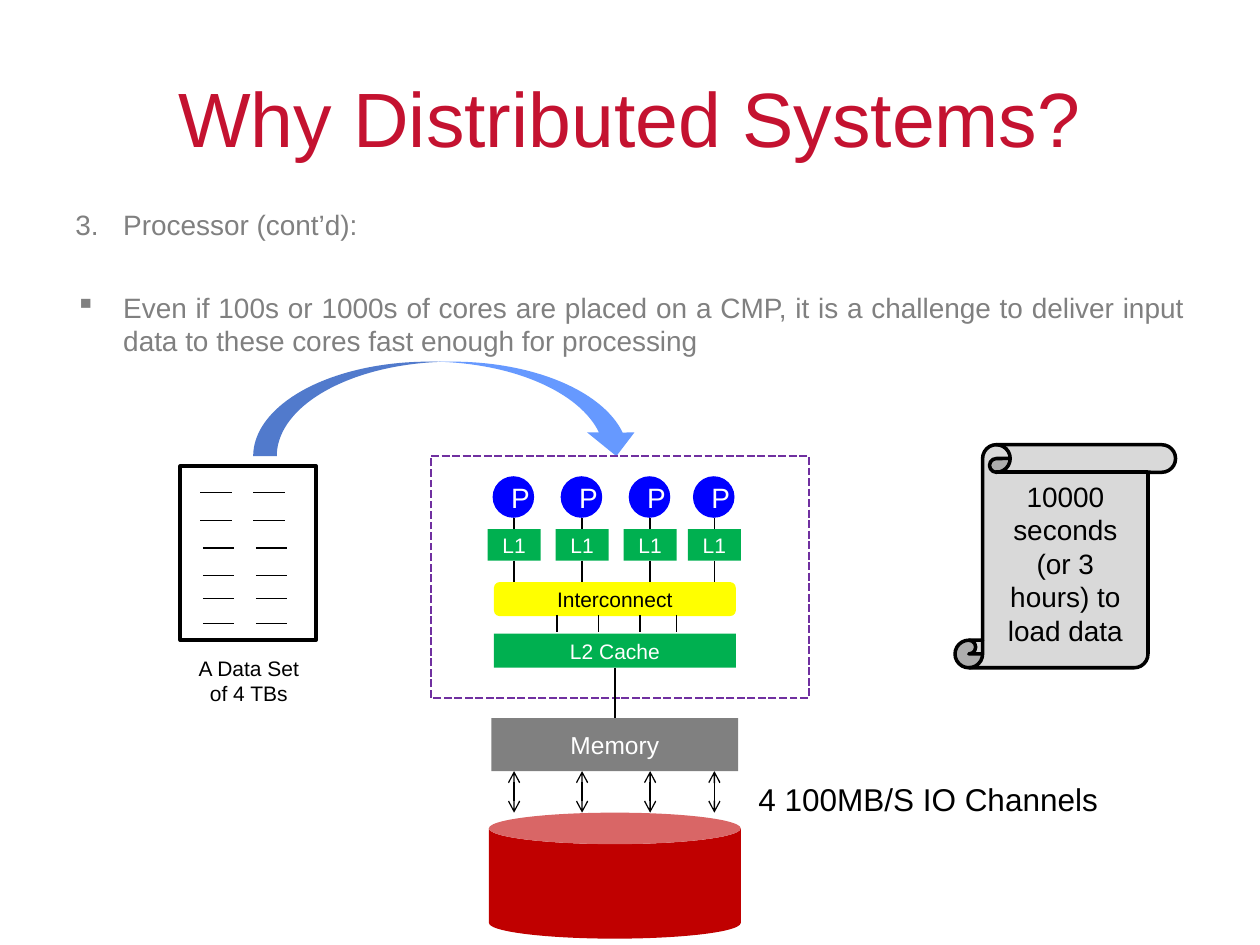
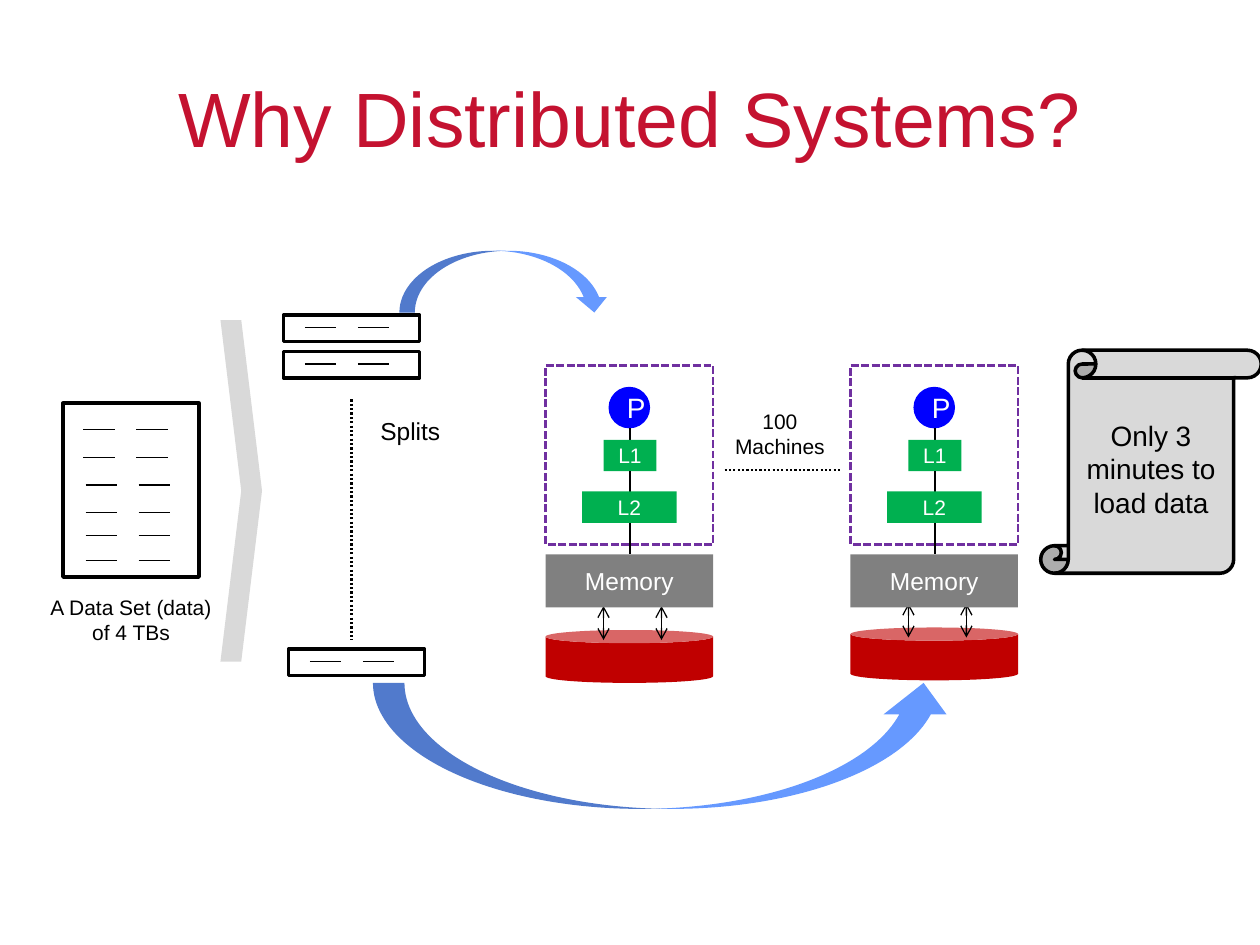
from lxml import etree
from pptx import Presentation
from pptx.dml.color import RGBColor
from pptx.enum.dml import MSO_LINE
from pptx.enum.shapes import MSO_CONNECTOR, MSO_SHAPE
from pptx.enum.text import MSO_ANCHOR, PP_ALIGN
from pptx.oxml.ns import qn
from pptx.util import Inches, Pt

RECT, ROUND, OVAL = MSO_SHAPE.RECTANGLE, MSO_SHAPE.ROUNDED_RECTANGLE, MSO_SHAPE.OVAL
CAN, SCROLL, CHEVRON = MSO_SHAPE.CAN, MSO_SHAPE.VERTICAL_SCROLL, MSO_SHAPE.CHEVRON
DOWN, UP = MSO_SHAPE.CURVED_DOWN_ARROW, MSO_SHAPE.CURVED_UP_ARROW
STRAIGHT = MSO_CONNECTOR.STRAIGHT
DASH, DOT = MSO_LINE.SQUARE_DOT, MSO_LINE.ROUND_DOT
LEFT, CENTER, JUSTIFY = PP_ALIGN.LEFT, PP_ALIGN.CENTER, PP_ALIGN.JUSTIFY
TOP, MIDDLE = MSO_ANCHOR.TOP, MSO_ANCHOR.MIDDLE

# Shared look
FONT = "Arial"
TITLE = "Why Distributed Systems?"
BLACK, WHITE, CRIMSON, GRAY, SILVER = "000000", "FFFFFF", "C41230", "808080", "D9D9D9"
BLUE, SKY, GREEN, YELLOW = "0000FF", "6699FF", "00B050", "FFFF00"
RED, PURPLE = "C00000", "7030A0"


def rgb(code):
    return RGBColor.from_string(code)


def write(para, text, size, color, align):
    para.alignment = align
    run = para.add_run()
    run.text = text
    for name, value in {"name": FONT, "size": Pt(size)}.items():
        setattr(run.font, name, value)
    run.font.color.rgb = rgb(color)


def label(slide, at, lines, size, color=BLACK, align=CENTER, anchor=TOP, wrap=False):
    frame = slide.shapes.add_textbox(*map(Inches, at)).text_frame
    for name, value in {"word_wrap": wrap, "vertical_anchor": anchor}.items():
        setattr(frame, name, value)
    for i, text in enumerate(lines):
        para = frame.add_paragraph() if i else frame.paragraphs[0]
        write(para, text, size, color, align)
    return frame


def block(slide, kind, at, fill=None, text="", size=12, color=WHITE,
          edge=None, width=2, dash=None):
    shape = slide.shapes.add_shape(kind, *map(Inches, at))
    shape.shadow.inherit = False
    if fill:
        shape.fill.solid()
        shape.fill.fore_color.rgb = rgb(fill)
    else:
        shape.fill.background()
    if edge:
        shape.line.color.rgb = rgb(edge)
        shape.line.width = Pt(width)
        if dash:
            shape.line.dash_style = dash
    else:
        shape.line.fill.background()
    if text:
        shape.text_frame.vertical_anchor = MIDDLE
        write(shape.text_frame.paragraphs[0], text, size, color, CENTER)


def rule(slide, x1, y1, x2, y2, width=0.75, dash=None, heads=False):
    line = slide.shapes.add_connector(STRAIGHT, *map(Inches, (x1, y1, x2, y2)))
    line.line.color.rgb = rgb(BLACK)
    line.line.width = Pt(width)
    if dash:
        line.line.dash_style = dash
    props = line._element.spPr
    if heads:
        for tag in ("a:headEnd", "a:tailEnd"):
            etree.SubElement(props.find(qn("a:ln")), qn(tag), type="arrow")
    etree.SubElement(props, qn("a:effectLst"))


def bullet(para, tag, **marks):
    props = para._p.get_or_add_pPr()
    props.set("marL", str(Inches(0.38)))
    props.set("indent", str(-Inches(0.38)))
    etree.SubElement(props, qn(tag), **marks)


def start(deck):
    slide = deck.slides.add_slide(deck.slide_layouts[6])
    label(slide, (0.5, 0.3, 9, 1.25), [TITLE], 44, CRIMSON, anchor=MIDDLE, wrap=True)
    return slide


# Data set page and its splits
def dashes(slide, x, y):
    for left in (x, x + 0.42):
        rule(slide, left, y, left + 0.25, y)


def sheet(slide, x, y):
    block(slide, RECT, (x, y, 1.08, 1.38), edge=BLACK)
    for i, drop in enumerate((0.21, 0.43, 0.65, 0.87, 1.05, 1.25)):
        dashes(slide, x + (0.16 if i < 2 else 0.18), y + drop)


def split(slide, x, y):
    block(slide, RECT, (x, y, 1.08, 0.21), edge=BLACK)
    dashes(slide, x + 0.17, y + 0.1)


def scroll(slide, x, y, text):
    block(slide, SCROLL, (x, y, 1.75, 1.77), SILVER, text, 16, BLACK, BLACK)


# Machine parts
def core(slide, x, y):
    block(slide, OVAL, (x - 0.17, y, 0.33, 0.33), BLUE, "P", 16)
    rule(slide, x, y + 0.33, x, y + 0.42)
    block(slide, RECT, (x - 0.21, y + 0.42, 0.42, 0.25), GREEN, "L1")
    rule(slide, x, y + 0.67, x, y + 0.84)


def chip(slide, at):
    block(slide, RECT, at, edge=PURPLE, width=1.5, dash=DASH)


def memory(slide, x, y, width):
    block(slide, RECT, (x, y, width, 0.42), GRAY, "Memory", 14)


def machine(slide, x, disk):
    mid = x + 0.67
    block(slide, CAN, (x, disk, 1.33, 0.42), RED)
    for lane in (x + 0.46, x + 0.92):
        rule(slide, lane, disk - 0.19, lane, disk + 0.08, heads=True)
    memory(slide, x, 4.4, 1.33)
    chip(slide, (x, 2.9, 1.33, 1.42))
    core(slide, mid, 3.07)
    block(slide, RECT, (mid - 0.38, 3.9, 0.75, 0.25), GREEN, "L2")
    rule(slide, mid, 4.15, mid, 4.4)


def single(deck):
    slide = start(deck)
    notes = label(slide, (0.5, 1.6, 9, 1.5), [
        "Processor (cont’d):",
        "Even if 100s or 1000s of cores are placed on a CMP, it is a challenge to "
        "deliver input data to these cores fast enough for processing",
    ], 16, GRAY, JUSTIFY, wrap=True)
    first, second = notes.paragraphs
    bullet(first, "a:buAutoNum", type="arabicPeriod", startAt="3")
    bullet(second, "a:buChar", char="▪")
    second.space_before = Pt(28)

    # Data to load
    sheet(slide, 1.43, 3.7)
    label(slide, (1.47, 5.15, 1.01, 0.51), ["A Data Set", "of 4 TBs"], 12)
    block(slide, DOWN, (2.01, 2.87, 3.07, 0.75), SKY)
    scroll(slide, 7.58, 3.53, "10000 seconds (or 3 hours) to load data")

    # Multicore chip
    chip(slide, (3.42, 3.62, 3, 1.92))
    lanes = (4.08, 4.62, 5.16, 5.67)
    for x in lanes:
        core(slide, x, 3.78)
        rule(slide, x, 6.12, x, 6.45, heads=True)
    block(slide, ROUND, (3.92, 4.62, 1.92, 0.27), YELLOW, "Interconnect", color=BLACK)
    block(slide, RECT, (3.92, 5.03, 1.92, 0.27), GREEN, "L2 Cache")
    for x in (4.42, 4.75, 5.08, 5.37):
        rule(slide, x, 4.88, x, 5.02)

    # Memory and disk
    rule(slide, 4.88, 5.3, 4.88, 5.7)
    memory(slide, 3.9, 5.7, 1.96)
    block(slide, CAN, (3.88, 6.45, 2, 1), RED)
    label(slide, (5.92, 6.14, 2.92, 0.4), ["4 100MB/S IO Channels"], 18, align=LEFT)


def cluster(deck):
    slide = start(deck)

    # Data set cut into splits
    sheet(slide, 0.5, 3.2)
    label(slide, (0.27, 4.67, 1.54, 0.51), ["A Data Set (data)", "of 4 TBs"], 12)
    block(slide, CHEVRON, (1.75, 2.54, 0.33, 2.71), SILVER)
    for x, y in ((2.25, 2.5), (2.25, 2.79), (2.29, 5.15)):
        split(slide, x, y)
    rule(slide, 2.79, 3.17, 2.79, 5.08, 1.25, DOT)
    label(slide, (2.92, 3.25, 0.68, 0.34), ["Splits"], 14, align=LEFT)

    # Machines
    machine(slide, 4.33, 5)
    machine(slide, 6.75, 4.98)
    rule(slide, 5.75, 3.73, 6.67, 3.73, 1.25, DOT)
    label(slide, (5.73, 3.19, 0.92, 0.51), ["100", "Machines"], 12)

    # Transfers and result
    block(slide, DOWN, (3.17, 1.99, 1.67, 0.49), SKY)
    block(slide, UP, (2.96, 5.42, 4.62, 1), SKY)
    scroll(slide, 8.26, 2.78, "Only 3 minutes to load data")


def main():
    deck = Presentation()
    deck.slide_width, deck.slide_height = Inches(10), Inches(7.5)
    single(deck)
    cluster(deck)
    deck.save("out.pptx")


if __name__ == "__main__":
    main()
